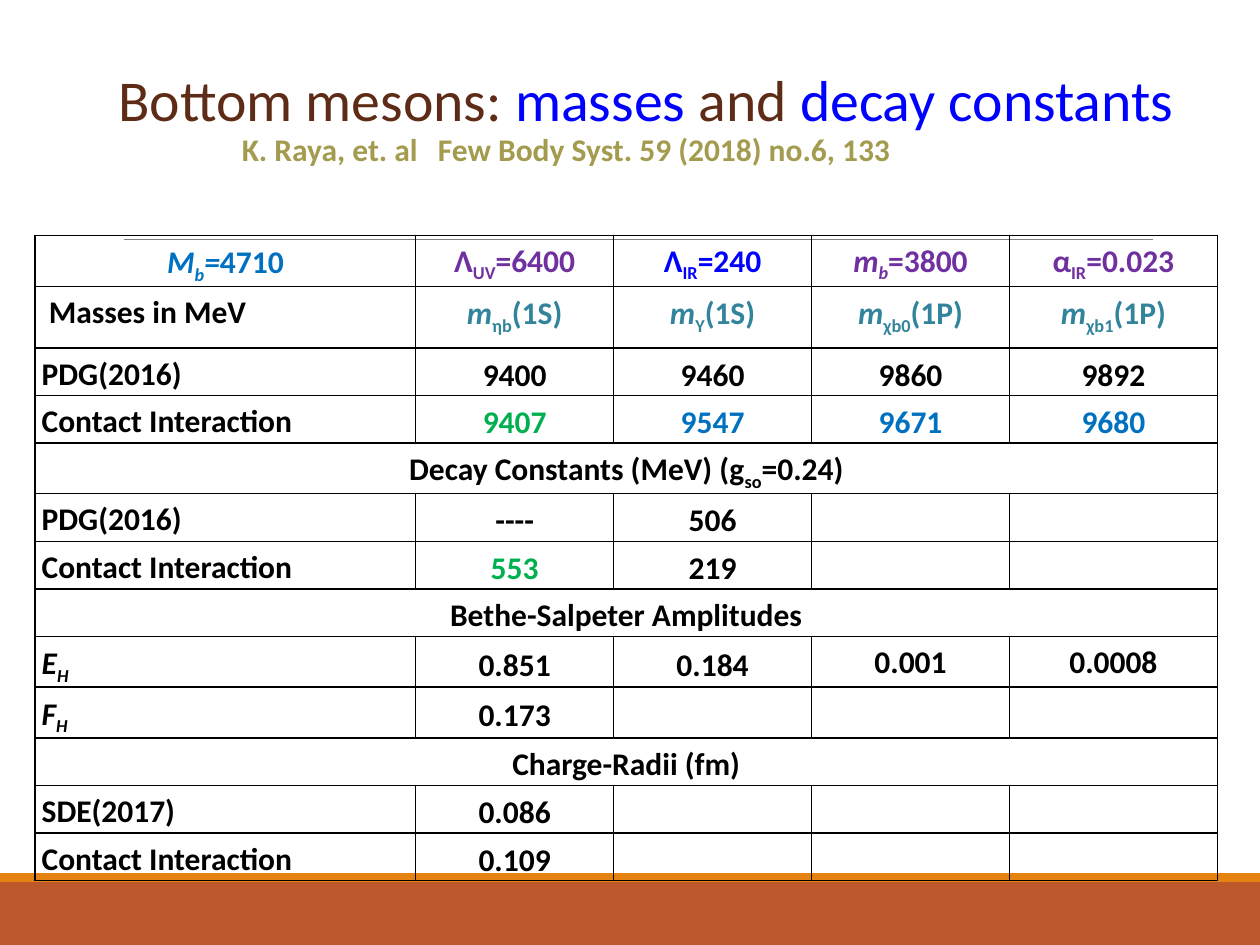
import pptx
import pptx.util
import pptx.dml.color
import pptx.enum.shapes
import pptx.enum.text
import pptx.oxml
import pptx.oxml.ns
from pptx.util import Cm

# Content. Pieces of a text are split by "|"; "/" marks italic, "_" subscript.
BLACK, BLUE, SKY = "000000", "0000FF", "0070C0"
PURPLE, TEAL, GREEN = "7030A0", "31849B", "00B050"
BROWN, OLIVE = "5E2C16", "A39B4E"

TITLE = [(" Bottom mesons: ", BROWN), ("masses", BLUE),
         (" and ", BROWN), ("decay constants", BLUE)]
CITATION = "K. Raya, et. al\t Few Body Syst. 59 (2018) no.6, 133"

# Each cell is a text in black or a (text, colour) pair; a lone cell spans its row.
ROWS = [
    [("/M|/_b|/=|4710", SKY), ("Λ|_UV|=6400", PURPLE), ("Λ|_IR|=240", BLUE),
     ("/m|/_b|=3800", PURPLE), ("α|_IR|=0.023", PURPLE)],
    ["\u00a0Masses in MeV", ("/m|_ηb|(1S)", TEAL), ("/m|_Υ|(1S)", TEAL),
     ("/m|_χb0|(1P)", TEAL), ("/m|_χb1|(1P)", TEAL)],
    ["PDG(2016)", "9400", "9460", "9860", "9892"],
    ["Contact Interaction", ("9407", GREEN), ("9547", SKY), ("9671", SKY), ("9680", SKY)],
    ["Decay Constants (MeV) (g|_so|=0.24)"],
    ["PDG(2016)", "----", "506", "", ""],
    ["Contact Interaction", ("553", GREEN), "219", "", ""],
    ["Bethe-Salpeter Amplitudes"],
    ["/E|/_H", "0.851", "0.184", "0.001", "0.0008"],
    ["/F|/_H", "0.173", "", "", ""],
    ["Charge-Radii (fm)"],
    ["SDE(2017)", "0.086", "", "", ""],
    ["Contact Interaction", "0.109", "", "", ""],
]
TOP_CELLS = {(8, 3), (8, 4)}
TIGHT_LABELS = {(2, 0), (3, 0)}
COLUMN_WIDTHS = [7.67, 3.99, 3.99, 3.99, 4.19]
ROW_HEIGHTS = [0.99, 1.24] + [0.96] * (len(ROWS) - 2)

ALIGN = pptx.enum.text.PP_ALIGN
ANCHOR = pptx.enum.text.MSO_ANCHOR


def colour(code):
    return pptx.dml.color.RGBColor.from_string(code)


def write(para, text, size=18, color=BLACK, bold=True, align=ALIGN.LEFT,
          spacing=None, after=None):
    para.alignment = align
    if spacing:
        para.line_spacing = spacing
    if after is not None:
        para.space_after = pptx.util.Pt(after)
    for piece in text.split("|"):
        span = para.add_run()
        span.text = piece.lstrip("/_")
        span.font.name = "Calibri"
        span.font.size = pptx.util.Pt(size)
        span.font.bold = bold
        span.font.italic = piece.startswith("/")
        span.font.color.rgb = colour(color)
        if piece.lstrip("/").startswith("_"):
            span.font._element.set("baseline", "-25000")


def place(box, left, top, width, height):
    box.left, box.top, box.width, box.height = Cm(left), Cm(top), Cm(width), Cm(height)


def add_bar(page, top, height, code):
    bar = page.shapes.add_shape(pptx.enum.shapes.MSO_SHAPE.RECTANGLE,
                                0, Cm(top), Cm(25.4), Cm(height))
    bar.shadow.inherit = False
    bar.fill.solid()
    bar.fill.fore_color.rgb = colour(code)
    bar.line.fill.background()


def add_borders(cell):
    properties = cell._tc.get_or_add_tcPr()
    for position, side in enumerate("LRTB"):
        properties.insert(position, pptx.oxml.parse_xml(
            f'<a:ln{side} {pptx.oxml.ns.nsdecls("a")} w="12700"><a:solidFill>'
            f'<a:srgbClr val="{BLACK}"/></a:solidFill></a:ln{side}>'))


def fill_cell(cell, row, column, content, heading):
    text, color = content if isinstance(content, tuple) else (content, BLACK)
    label = column == 0
    flush = row == 0 and not label
    cell.margin_left = cell.margin_right = Cm(0 if flush else 0.13)
    cell.margin_top = Cm(0 if flush else 0.03)
    cell.margin_bottom = 0
    if row > 1 and not label and text and (row, column) not in TOP_CELLS:
        cell.vertical_anchor = ANCHOR.MIDDLE
    if text:
        left = label and row > 0 and not heading
        write(cell.text_frame.paragraphs[0], text, color=color,
              align=ALIGN.LEFT if left else ALIGN.CENTER, spacing=1.15,
              after=0 if (row, column) in TIGHT_LABELS else 10)


def add_results(page):
    table = page.shapes.add_table(len(ROWS), len(COLUMN_WIDTHS), Cm(0.71), Cm(4.75),
                                  Cm(sum(COLUMN_WIDTHS)), Cm(sum(ROW_HEIGHTS))).table
    table.first_row = table.horz_banding = False
    for column, width in zip(table.columns, COLUMN_WIDTHS):
        column.width = Cm(width)
    for row, contents in enumerate(ROWS):
        table.rows[row].height = Cm(ROW_HEIGHTS[row])
        heading = len(contents) == 1
        for column in range(len(COLUMN_WIDTHS)):
            cell = table.cell(row, column)
            cell.fill.background()
            add_borders(cell)
            content = contents[column] if column < len(contents) else ""
            fill_cell(cell, row, column, content, heading)
        if heading:
            table.cell(row, 0).merge(table.cell(row, len(COLUMN_WIDTHS) - 1))


def main():
    deck = pptx.Presentation()
    deck.slide_width, deck.slide_height = Cm(25.4), Cm(19.05)
    page = deck.slides.add_slide(deck.slide_layouts[1])

    # Footer bars and the rule under the heading
    add_bar(page, 17.78, 1.27, "BD582C")
    add_bar(page, 17.6, 0.18, "E48312")
    rule = page.shapes.add_connector(pptx.enum.shapes.MSO_CONNECTOR.STRAIGHT,
                                     Cm(2.49), Cm(4.83), Cm(23.24), Cm(4.83))
    rule.line.color.rgb = colour("808080")
    rule.line.width = pptx.util.Pt(0.5)
    rule._element.spPr.append(pptx.oxml.parse_xml(
        f'<a:effectLst {pptx.oxml.ns.nsdecls("a")}/>'))

    add_results(page)

    # Title
    title = page.shapes.title
    place(title, 1.04, 0.61, 23.7, 2.11)
    title.text_frame.vertical_anchor = ANCHOR.BOTTOM
    title.text_frame.margin_bottom = Cm(0.03)
    for text, color in TITLE:
        write(title.text_frame.paragraphs[0], text, size=33, color=color,
              bold=False, align=ALIGN.CENTER)

    # Citation, without a bullet and with its own tab stop
    citation = page.placeholders[1]
    place(citation, 4.62, 2.49, 20, 1.2)
    citation.text_frame.auto_size = pptx.enum.text.MSO_AUTO_SIZE.NONE
    para = citation.text_frame.paragraphs[0]
    para.space_before = pptx.util.Pt(0)
    write(para, CITATION, color=OLIVE)
    properties = para._p.get_or_add_pPr()
    properties.set("marL", "0")
    properties.set("indent", "0")
    for markup in ("<a:buNone {}/>",
                   f'<a:tabLst {{}}><a:tab pos="{Cm(3.61)}" algn="l"/></a:tabLst>'):
        properties.append(pptx.oxml.parse_xml(markup.format(pptx.oxml.ns.nsdecls("a"))))

    deck.save("out.pptx")


if __name__ == "__main__":
    main()
